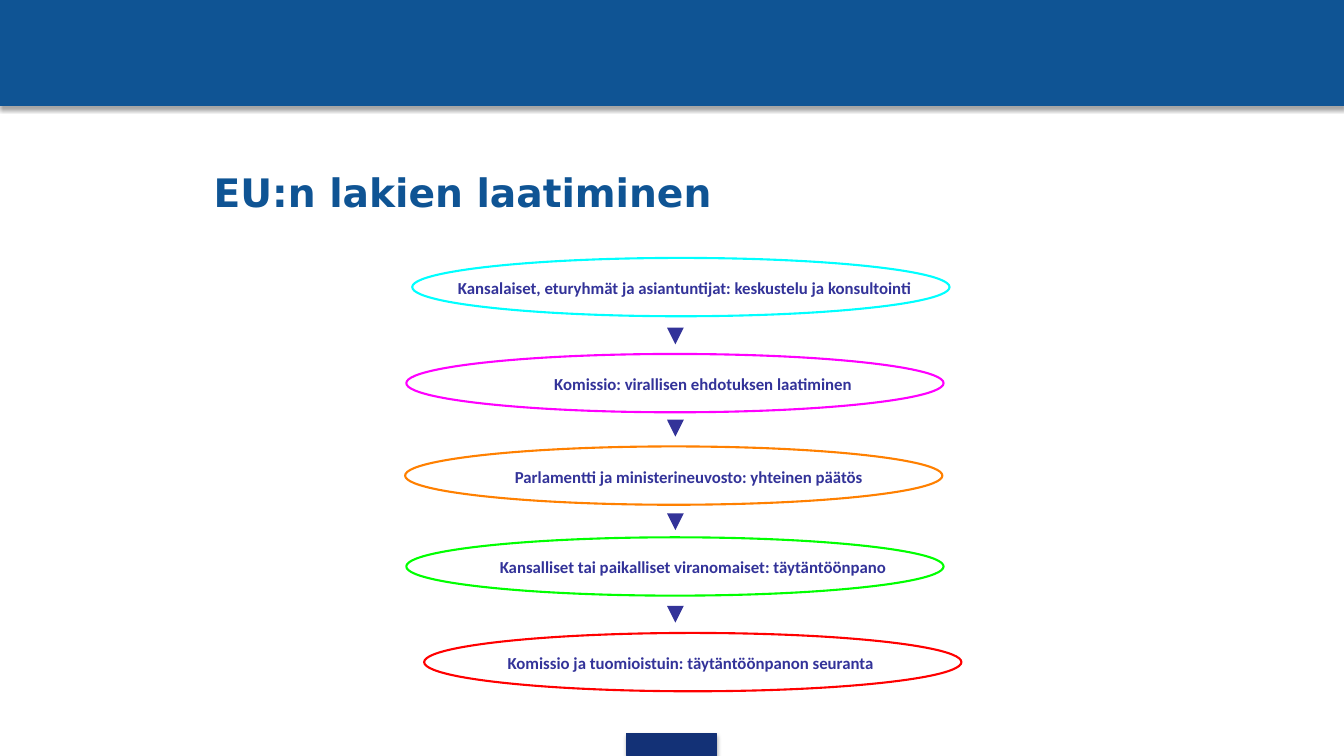
from lxml import etree
from pptx import Presentation
from pptx import util as u
from pptx.dml.color import RGBColor
from pptx.enum import shapes, text
from pptx.oxml import parse_xml
from pptx.oxml.ns import nsdecls, qn

BLUE, NAVY, INK = "0F5494", "133176", "333399"
SHADOW = (
    f'<a:effectLst {nsdecls("a")}><a:outerShdw blurRad="39400" dist="22900" '
    'dir="5400000" rotWithShape="0"><a:srgbClr val="000000">'
    '<a:alpha val="35000"/></a:srgbClr></a:outerShdw></a:effectLst>'
)

# text, colour, oval left, oval top, label left (cm)
STEPS = [
    ("Kansalaiset, eturyhmät ja asiantuntijat: keskustelu ja konsultointi",
     "00FFFF", 10.39, 6.5, 10.59),
    ("Komissio: virallisen ehdotuksen laatiminen ",
     "FF00FF", 10.24, 8.92, 11.1),
    ("Parlamentti ja ministerineuvosto: yhteinen päätös ",
     "FF8000", 10.21, 11.25, 10.74),
    ("Kansalliset tai paikalliset viranomaiset: täytäntöönpano",
     "00FF00", 10.24, 13.54, 10.8),
    ("Komissio ja tuomioistuin: täytäntöönpanon seuranta",
     "FF0000", 10.69, 15.95, 10.74),
]
ARROWS = [8.48, 10.8, 13.16, 15.49]


def color(code):
    return RGBColor.from_string(code)


def cm(*sizes):
    return [u.Cm(size) for size in sizes]


class Board:
    """Holds the deck, the current slide and the shared style."""

    def __init__(self, wide, high):
        self.deck = Presentation()
        self.deck.slide_width, self.deck.slide_height = cm(wide, high)
        self.slide = self.deck.slides.add_slide(self.deck.slide_layouts[5])
        self.items = self.slide.shapes

    def style(self, frame, words, face, size, tint, align):
        """Put styled words into a text frame."""
        frame.text = words
        frame.word_wrap = True
        para = frame.paragraphs[0]
        para.alignment = align
        font = para.runs[0].font
        font.name, font.size, font.bold = face, u.Pt(size), True
        font.color.rgb = color(tint)

    def title(self, words, *box):
        head = self.items.title
        head.left, head.top, head.width, head.height = cm(*box)
        frame = head.text_frame
        frame.vertical_anchor = text.MSO_ANCHOR.TOP
        self.style(frame, words, "DejaVu Sans", 28, BLUE, text.PP_ALIGN.LEFT)

    def shape(self, kind, fill, line, weight, *box):
        item = self.items.add_shape(kind, *cm(*box))
        item.shadow.inherit = False
        item.fill.solid()
        item.fill.fore_color.rgb = color(fill)
        item.line.color.rgb = color(line)
        item.line.width = u.Pt(weight)
        return item

    def bar(self, tint, *box):
        """Add a filled bar with a soft shadow below it."""
        item = self.shape(shapes.MSO_SHAPE.RECTANGLE, tint, tint, 0.75, *box)
        props = item.element.spPr
        props.replace(props.find(qn("a:effectLst")), parse_xml(SHADOW))

    def oval(self, tint, left, top):
        self.shape(shapes.MSO_SHAPE.OVAL, "FFFFFF", tint, 1.5,
                   left, top, 13.54, 1.47)

    def label(self, words, left, top):
        frame = self.items.add_textbox(*cm(left, top, 13.34, 1.07)).text_frame
        frame.vertical_anchor = text.MSO_ANCHOR.MIDDLE
        self.style(frame, words, "Calibri", 12, INK, text.PP_ALIGN.CENTER)

    def arrow(self, left, top):
        item = self.items.add_connector(
            shapes.MSO_CONNECTOR.STRAIGHT, *cm(left, top, left, top + 0.2))
        item.line.color.rgb = color(INK)
        item.line.width = u.Pt(4)
        props = item.element.spPr
        etree.SubElement(props.find(qn("a:ln")), qn("a:tailEnd"),
                         type="triangle")
        etree.SubElement(props, qn("a:effectLst"))


def main():
    board = Board(33.87, 19.05)
    board.bar(BLUE, 0, 0, 33.87, 2.67)
    board.bar(NAVY, 15.8, 18.49, 2.26, 0.56)
    board.title("EU:n lakien laatiminen", 5.13, 4.11, 20.4, 1.45)
    for words, tint, left, top, start in STEPS:
        board.oval(tint, left, top)
        board.label(words, start, top + 0.22)
    for top in ARROWS:
        board.arrow(17.02, top)
    board.deck.save("out.pptx")


if __name__ == "__main__":
    main()
